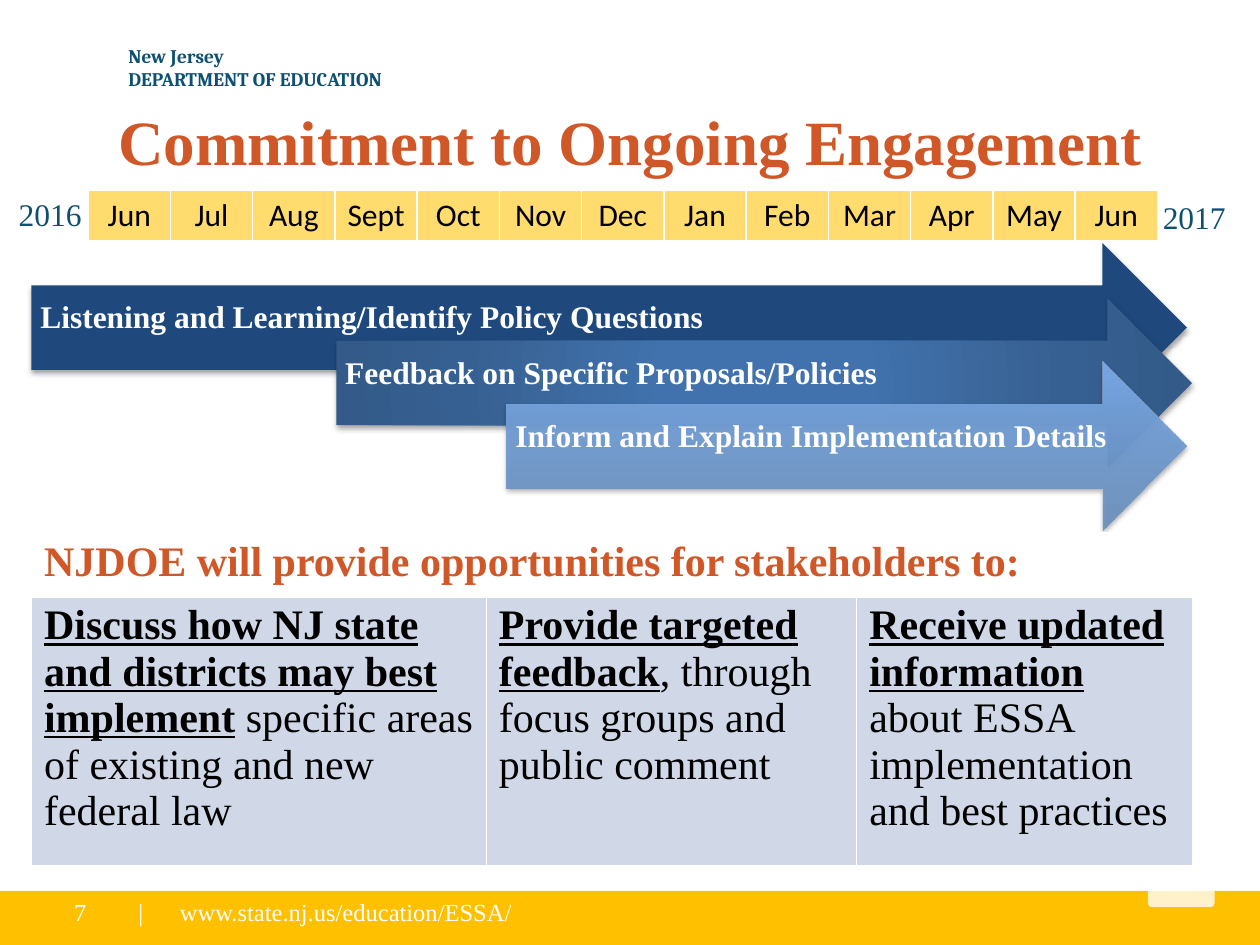
from lxml import etree
from pptx import Presentation
from pptx.dml.color import RGBColor
from pptx.enum.shapes import MSO_SHAPE
from pptx.enum.text import MSO_ANCHOR, PP_ALIGN
from pptx.oxml import parse_xml
from pptx.oxml.ns import nsdecls, qn
from pptx.util import Inches, Pt

RECTANGLE = MSO_SHAPE.RECTANGLE
ROUNDED = MSO_SHAPE.ROUNDED_RECTANGLE
ARROW = MSO_SHAPE.RIGHT_ARROW
TOP, MIDDLE = MSO_ANCHOR.TOP, MSO_ANCHOR.MIDDLE
LEFT, CENTER = PP_ALIGN.LEFT, PP_ALIGN.CENTER
SERIF = "Times New Roman"
NAVY, RUST, WHITE, BLACK = "0D5072", "D05727", "FFFFFF", "000000"
GOLD, PALE_GOLD, PALE_BLUE = "FFC000", "FFDC6D", "D0D8E8"
MONTHS = "Jun Jul Aug Sept Oct Nov Dec Jan Feb Mar Apr May Jun".split()
ACTIONS = [
    ("Discuss how NJ state and districts may best implement",
     " specific areas of existing and new federal law"),
    ("Provide targeted feedback", ", through focus groups and public comment"),
    ("Receive updated information", " about ESSA implementation and best practices"),
]
PHASES = [
    ("Listening and Learning/Identify Policy Questions",
     (0.25, 1.93, 9.17, 1.34), [(0, "1F497D", 100)], ""),
    ("Feedback on Specific Proposals/Policies", (2.67, 2.37, 6.79, 1.34),
     [(0, "4172AD", 100), (23, "4172AD", 100), (69, "376092", 100), (97, "335A88", 100)],
     '<a:path path="circle"><a:fillToRect l="50000" t="50000" r="50000" b="50000"/></a:path>'),
    ("Inform and Explain Implementation Details", (4.02, 2.87, 5.4, 1.34),
     [(0, "6A90BD", 90), (100, "77A6E3", 100)], '<a:lin ang="16200000" scaled="0"/>'),
]


def color(value):
    """Turn a hex string into a colour."""
    return RGBColor.from_string(value)


def inches(box):
    """Turn the four numbers of a box into lengths."""
    return [Inches(number) for number in box]


def add_span(para, text, size, fill, bold=False, underline=False, font=SERIF):
    """Add one formatted run to a paragraph."""
    span = para.add_run()
    span.text = text
    span.font.name, span.font.size = font, Pt(size)
    span.font.bold, span.font.underline = bold, underline
    span.font.color.rgb = color(fill)


def add_text(page, box, lines, size, fill, bold=False, font=SERIF, align=LEFT,
             anchor=TOP, wrap=True, margins=(0.1, 0.05, 0.1, 0.05), spacing=1.0):
    """Place a text box with one paragraph for each line."""
    frame = page.shapes.add_textbox(*inches(box)).text_frame
    frame.word_wrap, frame.vertical_anchor = wrap, anchor
    (frame.margin_left, frame.margin_top,
     frame.margin_right, frame.margin_bottom) = inches(margins)
    for index, line in enumerate(lines):
        para = frame.add_paragraph() if index else frame.paragraphs[0]
        para.alignment, para.line_spacing = align, spacing
        add_span(para, line, size, fill, bold, font=font)
    return frame


def add_plain_shape(page, kind, box, fill):
    """Place a preset shape with a solid fill and no line or shadow."""
    shape = page.shapes.add_shape(kind, *inches(box))
    shape.shadow.inherit = False
    shape.fill.solid()
    shape.fill.fore_color.rgb = color(fill)
    shape.line.fill.background()
    return shape


def set_borders(cell, bottom=1):
    """Draw white borders around a table cell."""
    properties = cell._tc.get_or_add_tcPr()
    for index, (side, width) in enumerate(zip("LRTB", (1, 1, 1, bottom))):
        properties.insert(index, parse_xml(
            f'<a:ln{side} {nsdecls("a")} w="{Pt(width)}"><a:solidFill>'
            f'<a:srgbClr val="{WHITE}"/></a:solidFill></a:ln{side}>'))


def add_grid(page, box, widths, heights):
    """Place a table with the given column widths and row heights."""
    table = page.shapes.add_table(len(heights), len(widths), *inches(box)).table
    table.first_row = table.horz_banding = False
    for column, width in zip(table.columns, widths):
        column.width = Inches(width)
    for row, height in zip(table.rows, heights):
        row.height = Inches(height)
    return table


def fill_cell(cell, fill, bottom=1):
    """Give a cell its fill and borders."""
    if fill:
        cell.fill.solid()
        cell.fill.fore_color.rgb = color(fill)
    else:
        cell.fill.background()
    set_borders(cell, bottom)


def add_footer(page, box):
    """Place the gold band with page number, address and corner tab."""
    left, top, width, height = box
    add_plain_shape(page, RECTANGLE, box, GOLD)
    frame = add_text(page, (left + 1, top, 3.6, 0.34),
                     ["|\twww.state.nj.us/education/ESSA/"], 14, WHITE)
    tabs = etree.SubElement(frame.paragraphs[0]._p.get_or_add_pPr(), qn("a:tabLst"))
    etree.SubElement(tabs, qn("a:tab"), pos=str(Inches(0.33)), algn="l")
    add_text(page, (left + 0.49, top, 0.43, 0.34), ["7"], 14, WHITE, wrap=False)
    corner = add_plain_shape(page, ROUNDED, (left + 9.11, top - 0.09, 0.53, 0.22), WHITE)
    tint = corner._element.spPr.find(qn("a:solidFill"))[0]
    etree.SubElement(tint, qn("a:alpha"), val="79000")


def add_header(page, box):
    """Place the department name and the title."""
    left, top, width, height = box
    add_text(page, (left + 0.92, top, 2.5, 0.47),
             ["New Jersey", "DEPARTMENT OF EDUCATION"], 11, NAVY, True, "Cambria",
             anchor=MIDDLE)
    add_text(page, (left, top + 0.45, width, 0.72), ["Commitment to Ongoing Engagement"],
             36, RUST, True, align=CENTER, anchor=MIDDLE)


def add_timeline(page, box):
    """Place the row of months between its two years."""
    left, top, width, height = box
    table = add_grid(page, box, [width / len(MONTHS)] * len(MONTHS), [height])
    for cell, month in zip(table.rows[0].cells, MONTHS):
        cell.margin_left = cell.margin_right = Inches(0.08)
        para = cell.text_frame.paragraphs[0]
        para.alignment = CENTER
        add_span(para, month, 18, BLACK, font="Calibri")
        fill_cell(cell, PALE_GOLD, 3)
    add_text(page, (left - 0.65, top - 0.01, 0.71, 0.4), ["2016"], 18, NAVY, wrap=False)
    add_text(page, (left + 8.43, top + 0.01, 0.71, 0.4), ["2017"], 18, NAVY, wrap=False)


def add_phase(page, box, label, stops, direction):
    """Place one shadowed arrow with its label."""
    left, top, width, height = box
    arrow = add_plain_shape(page, ARROW, box, stops[0][1])
    properties = arrow._element.spPr
    if direction:
        colors = "".join(
            f'<a:gs pos="{place * 1000}"><a:srgbClr val="{tint}">'
            f'<a:alpha val="{alpha * 1000}"/></a:srgbClr></a:gs>'
            for place, tint, alpha in stops)
        properties.replace(properties.find(qn("a:solidFill")), parse_xml(
            f'<a:gradFill {nsdecls("a")} rotWithShape="1"><a:gsLst>{colors}</a:gsLst>'
            f'{direction}</a:gradFill>'))
    properties.find(qn("a:effectLst")).append(parse_xml(
        f'<a:outerShdw {nsdecls("a")} blurRad="{Pt(3.1)}" dist="{Pt(1.8)}" dir="5400000" '
        f'rotWithShape="0"><a:srgbClr val="{BLACK}"><a:alpha val="35000"/></a:srgbClr>'
        '</a:outerShdw>'))
    add_text(page, (left, top + height / 4, width - height / 4, height / 2), [label],
             18, WHITE, True, anchor=MIDDLE, margins=(0.07, 0.07, 0.28, 0.21), spacing=0.9)


def add_opportunities(page, box):
    """Place the table of what stakeholders can do."""
    table = add_grid(page, box, [3.61, 2.94, 2.67], [0.48, 2.14])
    for heading in table.rows[0].cells:
        fill_cell(heading, None, 3)
    heading = table.cell(0, 0)
    heading.merge(table.cell(0, 2))
    add_span(heading.text_frame.paragraphs[0],
             "NJDOE will provide opportunities for stakeholders to:", 24, RUST, True)
    for cell, (action, detail) in zip(table.rows[1].cells, ACTIONS):
        para = cell.text_frame.paragraphs[0]
        add_span(para, action, 24, BLACK, True, True)
        add_span(para, detail, 24, BLACK)
        fill_cell(cell, PALE_BLUE)


def main():
    """Build the slide and save it."""
    deck = Presentation()
    deck.slide_width, deck.slide_height = Inches(10), Inches(7.5)
    page = deck.slides.add_slide(deck.slide_layouts[6])
    add_footer(page, (0, 7.07, 10, 0.45))
    add_header(page, (0, 0.3, 10, 1.17))
    add_timeline(page, (0.7, 1.51, 8.49, 0.41))
    for label, box, stops, direction in PHASES:
        add_phase(page, box, label, stops, direction)
    add_opportunities(page, (0.25, 4.23, 9.23, 2.64))
    deck.save("out.pptx")


if __name__ == "__main__":
    main()
